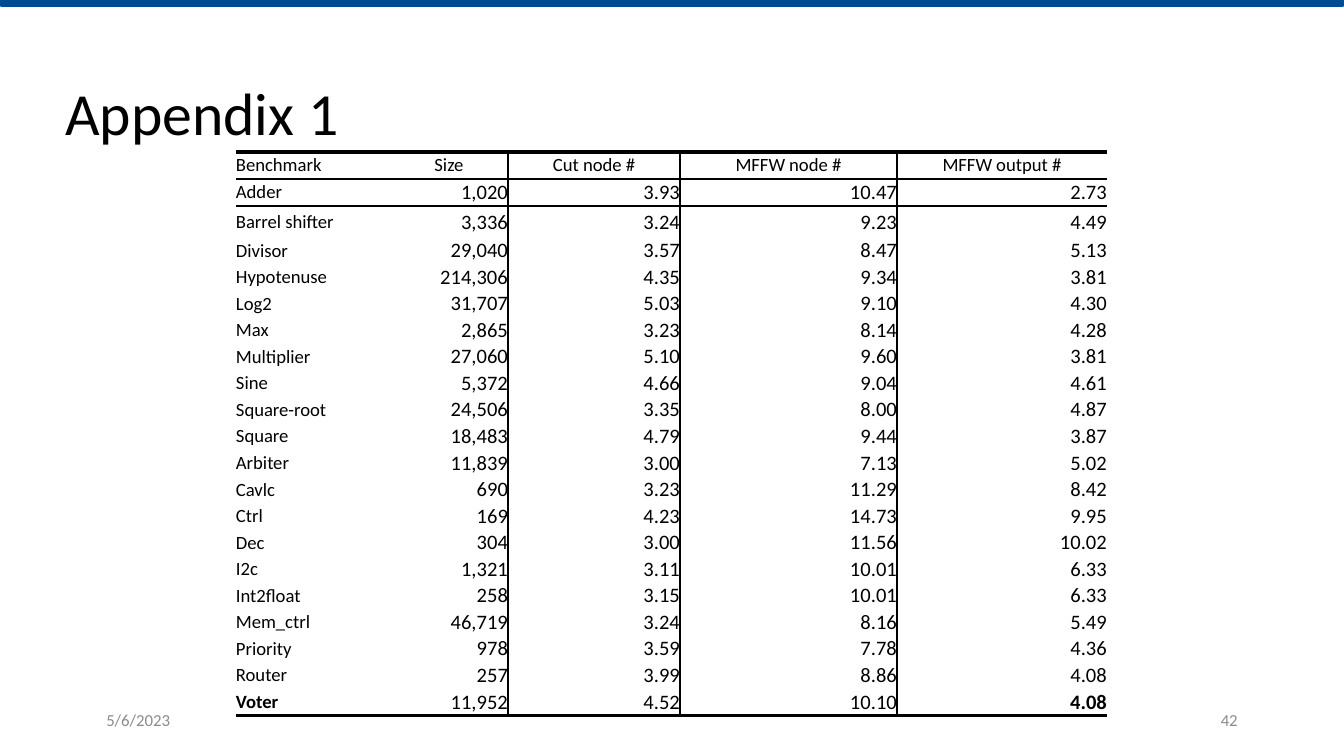
"""Build the appendix slide with the benchmark statistics table."""
from lxml import etree
from pptx import Presentation
from pptx.dml.color import RGBColor
from pptx.enum.shapes import MSO_SHAPE
from pptx.enum.text import MSO_ANCHOR, PP_ALIGN
from pptx.oxml.ns import qn
from pptx.util import Emu, Pt

LEFT, CENTER, RIGHT = PP_ALIGN.LEFT, PP_ALIGN.CENTER, PP_ALIGN.RIGHT
MIDDLE = MSO_ANCHOR.MIDDLE
SNIPPED_BAR = MSO_SHAPE.SNIP_2_SAME_RECTANGLE
COLORS = {"bar": "004C90", "ink": "000000", "footer": "8C8C8C", "cell": "FFFFFF"}
HEADER = ("Benchmark", "Size", "Cut node #", "MFFW node #", "MFFW output #")
ROWS = [
    ("Adder", "1,020", "3.93", "10.47", "2.73"),
    ("Barrel shifter", "3,336", "3.24", "9.23", "4.49"),
    ("Divisor", "29,040", "3.57", "8.47", "5.13"),
    ("Hypotenuse", "214,306", "4.35", "9.34", "3.81"),
    ("Log2", "31,707", "5.03", "9.10", "4.30"),
    ("Max", "2,865", "3.23", "8.14", "4.28"),
    ("Multiplier", "27,060", "5.10", "9.60", "3.81"),
    ("Sine", "5,372", "4.66", "9.04", "4.61"),
    ("Square-root", "24,506", "3.35", "8.00", "4.87"),
    ("Square", "18,483", "4.79", "9.44", "3.87"),
    ("Arbiter", "11,839", "3.00", "7.13", "5.02"),
    ("Cavlc", "690", "3.23", "11.29", "8.42"),
    ("Ctrl", "169", "4.23", "14.73", "9.95"),
    ("Dec", "304", "3.00", "11.56", "10.02"),
    ("I2c", "1,321", "3.11", "10.01", "6.33"),
    ("Int2float", "258", "3.15", "10.01", "6.33"),
    ("Mem_ctrl", "46,719", "3.24", "8.16", "5.49"),
    ("Priority", "978", "3.59", "7.78", "4.36"),
    ("Router", "257", "3.99", "8.86", "4.08"),
    ("Voter", "11,952", "4.52", "10.10", "4.08"),
]
BOLD_CELLS = {(20, 0), (20, 4)}
ROW_LINES = {0: 2, 1: 1, 2: 1, 21: 2}
COLUMN_LINES = {2: 1, 3: 1, 4: 1}
COLUMN_WIDTHS = (154, 118, 172, 217, 210)
FIRST_HEIGHTS = [27, 27, 32]
BODY_HEIGHT, BODY_COUNT = 478, 18


def px(length):
    return Emu(round(length * 914400 / 134.4))


def style(paragraph, size, color, alignment):
    paragraph.alignment = alignment
    paragraph.font.name = "Calibri"
    paragraph.font.size = Pt(size)
    paragraph.font.color.rgb = RGBColor.from_string(COLORS[color])


presentation = Presentation()
presentation.slide_width, presentation.slide_height = px(1344), px(756)
slide = presentation.slides.add_slide(presentation.slide_layouts[6])

bar = slide.shapes.add_shape(SNIPPED_BAR, px(0), px(0), px(1344), px(7))
bar.rotation = 180
bar.shadow.inherit = False
bar.fill.solid()
bar.fill.fore_color.rgb = RGBColor.from_string(COLORS["bar"])
bar.line.fill.background()

for text, left, top, width, height, size, color, alignment, spacing in (
    ("Appendix 1", 52, 86, 798, 60, 32, "ink", LEFT, 0.9),
    ("5/6/2023", 93, 700, 302, 40, 9, "footer", LEFT, 1.0),
    ("42", 949, 700, 302, 40, 9, "footer", RIGHT, 1.0),
):
    text_box = slide.shapes.add_textbox(px(left), px(top), px(width), px(height))
    text_frame = text_box.text_frame
    text_frame.word_wrap = True
    text_frame.vertical_anchor = MIDDLE
    paragraph = text_frame.paragraphs[0]
    paragraph.text = text
    paragraph.line_spacing = spacing
    style(paragraph, size, color, alignment)

row_heights = FIRST_HEIGHTS + [
    BODY_HEIGHT * (index + 1) // BODY_COUNT - BODY_HEIGHT * index // BODY_COUNT
    for index in range(BODY_COUNT)
]
table = slide.shapes.add_table(
    len(row_heights), len(COLUMN_WIDTHS),
    px(236), px(152), px(sum(COLUMN_WIDTHS)), px(sum(row_heights)),
).table
table.first_row = False
table.horz_banding = False
for column, width in zip(table.columns, COLUMN_WIDTHS):
    column.width = px(width)
for row, height in zip(table.rows, row_heights):
    row.height = px(height)

for row_index, values in enumerate([HEADER, *ROWS]):
    for column_index, value in enumerate(values):
        cell = table.cell(row_index, column_index)
        cell.margin_left = cell.margin_right = cell.margin_top = cell.margin_bottom = 0
        cell.vertical_anchor = MIDDLE
        paragraph = cell.text_frame.paragraphs[0]
        paragraph.text = value
        is_label = row_index == 0 or column_index == 0
        alignment = LEFT if column_index == 0 else CENTER if row_index == 0 else RIGHT
        style(paragraph, 10 if is_label else 11, "ink", alignment)
        paragraph.font.bold = (row_index, column_index) in BOLD_CELLS

        properties = cell._tc.get_or_add_tcPr()
        for tag, line_width in (
            ("a:lnL", COLUMN_LINES.get(column_index)),
            ("a:lnR", COLUMN_LINES.get(column_index + 1)),
            ("a:lnT", ROW_LINES.get(row_index)),
            ("a:lnB", ROW_LINES.get(row_index + 1)),
        ):
            border = etree.SubElement(properties, qn(tag))
            if line_width:
                border.set("w", str(Pt(line_width)))
                fill = etree.SubElement(border, qn("a:solidFill"))
                etree.SubElement(fill, qn("a:srgbClr"), val=COLORS["ink"])
            else:
                etree.SubElement(border, qn("a:noFill"))
        cell.fill.solid()
        cell.fill.fore_color.rgb = RGBColor.from_string(COLORS["cell"])

presentation.save("out.pptx")
